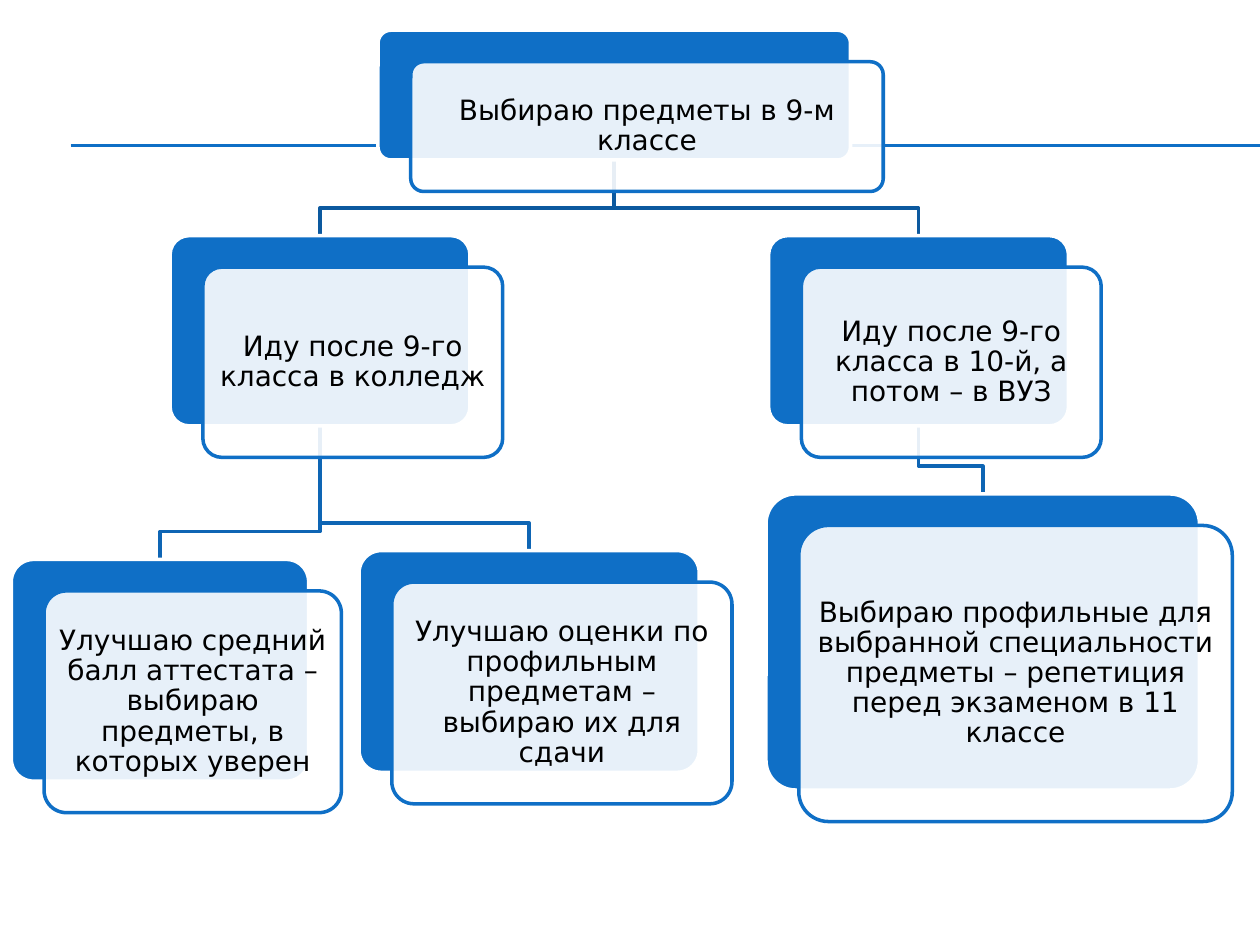
"""Build a slide with a decision tree for choosing exam subjects after grade 9."""
import pptx
import pptx.util
import pptx.dml.color
import pptx.enum.shapes
import pptx.enum.text
import lxml.etree
import pptx.oxml.ns

Inches = pptx.util.Inches
Pt = pptx.util.Pt
BLUE, WHITE, BLACK = "0F6FC6", "FFFFFF", "000000"
OFFSET_X, OFFSET_Y, BEND = 0.26, 0.25, 0.22


def color(value):
    return pptx.dml.color.RGBColor.from_string(value)


def add_card(shapes, left, top, width, height, fill, line):
    shape = shapes.add_shape(
        pptx.enum.shapes.MSO_SHAPE.ROUNDED_RECTANGLE,
        Inches(left), Inches(top), Inches(width), Inches(height))
    shape.adjustments[0] = 0.1
    shape.shadow.inherit = False
    shape.fill.solid()
    shape.fill.fore_color.rgb = color(fill)
    shape.line.color.rgb = color(line)
    shape.line.width = Pt(2)
    return shape


presentation = pptx.Presentation()
presentation.slide_width = Inches(10)
presentation.slide_height = Inches(7.5)
slide = presentation.slides.add_slide(presentation.slide_layouts[6])
shapes = slide.shapes

nodes = {
    "root": (3, 0.24, 3.75, 1.03, "Выбираю предметы в 9-м классе"),
    "college": (1.35, 1.87, 2.38, 1.51, "Иду после 9-го класса в колледж"),
    "average": (0.09, 4.44, 2.36, 1.76,
                "Улучшаю средний балл аттестата – выбираю предметы, в которых уверен"),
    "grades": (2.85, 4.37, 2.7, 1.76,
               "Улучшаю оценки по профильным предметам – выбираю их для сдачи"),
    "university": (6.1, 1.87, 2.38, 1.51, "Иду после 9-го класса в 10-й, а потом – в ВУЗ"),
    "profile": (6.08, 3.92, 3.44, 2.35,
                "Выбираю профильные для выбранной специальности предметы – "
                "репетиция перед экзаменом в 11 классе"),
}
branches = [
    ("university", "profile", "0E65B4"),
    ("root", "university", "0C599F"),
    ("college", "grades", "0E65B4"),
    ("college", "average", "0E65B4"),
    ("root", "college", "0C599F"),
]
frame_format = {
    "word_wrap": True,
    "vertical_anchor": pptx.enum.text.MSO_ANCHOR.MIDDLE,
    "margin_left": Inches(0.02),
    "margin_right": Inches(0.02),
    "margin_top": Inches(0.02),
    "margin_bottom": Inches(0.02),
}
paragraph_format = {"alignment": pptx.enum.text.PP_ALIGN.CENTER, "line_spacing": 0.9}
font_format = {"name": "DejaVu Sans", "size": Pt(16)}

for y in (1.15, 1.16):
    rule = shapes.add_connector(
        pptx.enum.shapes.MSO_CONNECTOR.STRAIGHT,
        Inches(0.56), Inches(y), Inches(10), Inches(y))
    rule.line.color.rgb = color(BLUE)
    rule.line.width = Pt(0.75)
    lxml.etree.SubElement(rule._element.spPr, pptx.oxml.ns.qn("a:effectLst"))

for parent, child, line_color in branches:
    left, top, width, height, text = nodes[parent]
    start_x, start_y = left + width / 2, top + height
    left, top, width, height, text = nodes[child]
    end_x, bend_y = left + width / 2, top - BEND
    builder = shapes.build_freeform(Inches(start_x), Inches(start_y))
    corners = [(start_x, bend_y), (end_x, bend_y), (end_x, top)]
    builder.add_line_segments([(Inches(x), Inches(y)) for x, y in corners], close=False)
    branch = builder.convert_to_shape()
    branch.shadow.inherit = False
    branch.fill.background()
    branch.line.color.rgb = color(line_color)
    branch.line.width = Pt(2)

for left, top, width, height, text in nodes.values():
    add_card(shapes, left, top, width, height, BLUE, WHITE)
    card = add_card(shapes, left + OFFSET_X, top + OFFSET_Y, width, height, WHITE, BLUE)
    fill_color = card._element.spPr.find(
        pptx.oxml.ns.qn("a:solidFill") + "/" + pptx.oxml.ns.qn("a:srgbClr"))
    lxml.etree.SubElement(fill_color, pptx.oxml.ns.qn("a:alpha"), val="90000")
    frame = card.text_frame
    paragraph = frame.paragraphs[0]
    run = paragraph.add_run()
    run.text = text
    run.font.color.rgb = color(BLACK)
    for target, values in (
            (frame, frame_format), (paragraph, paragraph_format), (run.font, font_format)):
        for name, value in values.items():
            setattr(target, name, value)

presentation.save("out.pptx")
